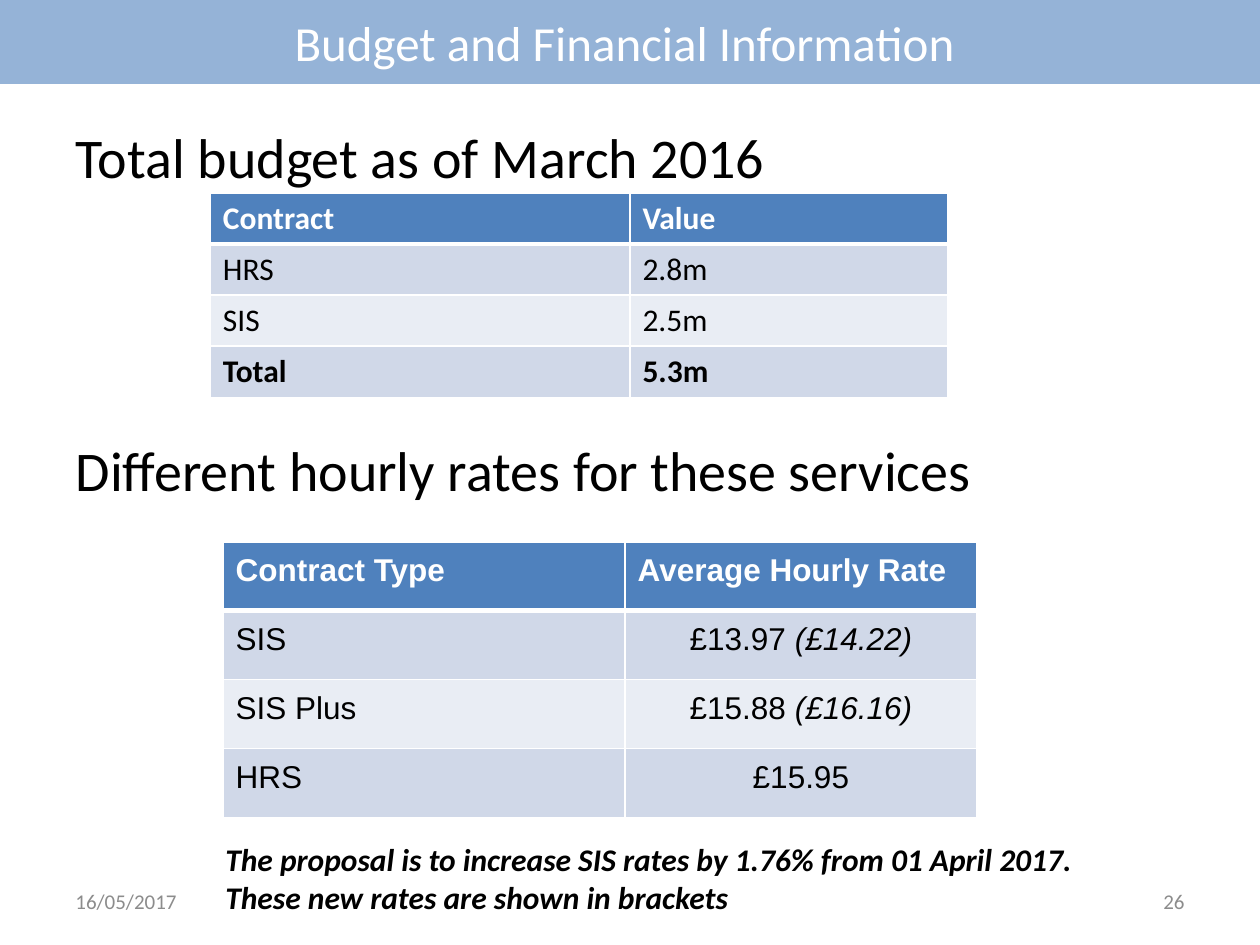
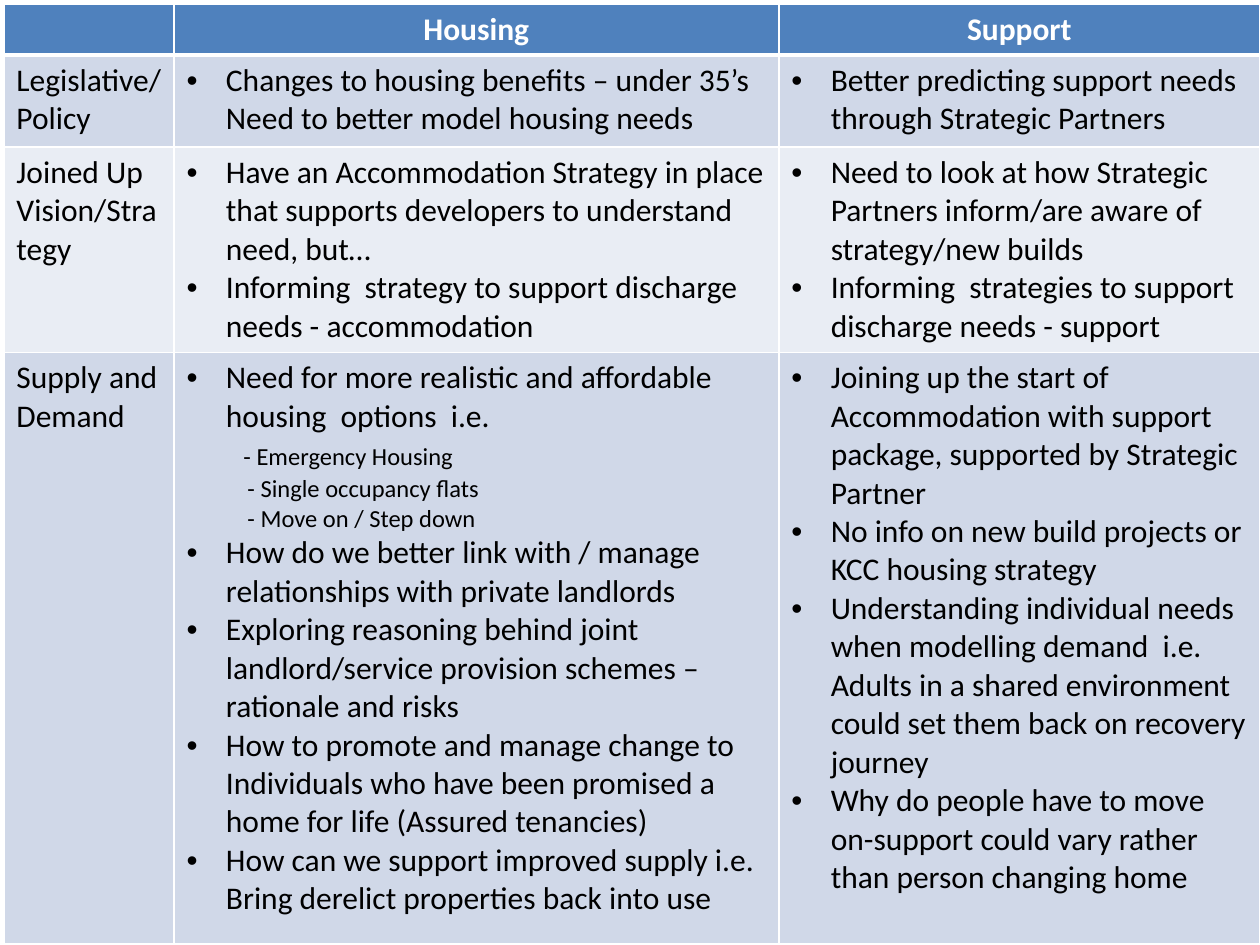
import pptx
import pptx.dml.color
import pptx.enum.text
import pptx.oxml.ns
import pptx.util
from lxml import etree

Pt = pptx.util.Pt
RGBColor = pptx.dml.color.RGBColor
Align = pptx.enum.text.PP_ALIGN
Anchor = pptx.enum.text.MSO_ANCHOR
qn = pptx.oxml.ns.qn

# Shared colours and formats
BLACK = RGBColor(0x00, 0x00, 0x00)
WHITE = RGBColor(0xFF, 0xFF, 0xFF)
GREY = RGBColor(0x8C, 0x8C, 0x8C)
BAND_BLUE = RGBColor(0x95, 0xB3, 0xD7)
HEADER_BLUE = RGBColor(0x4F, 0x81, 0xBD)
ROW_DARK = RGBColor(0xD0, 0xD8, 0xE8)
ROW_LIGHT = RGBColor(0xE9, 0xED, 0xF4)

TITLE_FONT = {"name": "Calibri", "size": Pt(28), "color": WHITE}
HEADING_FONT = {"name": "Calibri", "size": Pt(32), "color": BLACK}
FOOTER_FONT = {"name": "Calibri", "size": Pt(12), "color": GREY}
NOTE_FONT = {"name": "Calibri", "size": Pt(18), "color": BLACK,
             "bold": True, "italic": True}
CELL_FONT = {"name": "Calibri", "size": Pt(18), "color": BLACK, "bold": False}
HEADER_FONT = {**CELL_FONT, "color": WHITE, "bold": True}


def write_lines(text_frame, text, font_format, paragraph_format=None):
    """Write one paragraph per line of text and format each of them."""
    for index, line in enumerate(text.split("\n")):
        paragraph = text_frame.paragraphs[0] if index == 0 else text_frame.add_paragraph()
        for name, value in (paragraph_format or {}).items():
            setattr(paragraph, name, value)
        if not line:
            continue
        run = paragraph.add_run()
        run.text = line
        for name, value in font_format.items():
            if name == "color":
                run.font.color.rgb = value
            else:
                setattr(run.font, name, value)


def add_grid(slide, left, top, widths, heights, texts, font_name="Calibri"):
    """Add a banded table with white rules and a thick rule below its header."""
    table = slide.shapes.add_table(
        len(heights), len(widths), Pt(left), Pt(top),
        Pt(sum(widths)), Pt(sum(heights))).table
    for column, width in zip(table.columns, widths):
        column.width = Pt(width)
    for row_index, height in enumerate(heights):
        table.rows[row_index].height = Pt(height)
        for column_index, text in enumerate(texts[row_index]):
            cell = table.cell(row_index, column_index)
            font_format = HEADER_FONT if row_index == 0 else CELL_FONT
            write_lines(cell.text_frame, text, {**font_format, "name": font_name})
            # Borders come before the fill in the cell properties
            thick_side = {0: "lnB", 1: "lnT"}.get(row_index)
            for side in ("lnL", "lnR", "lnT", "lnB"):
                width = Pt(3) if side == thick_side else Pt(1)
                line = etree.SubElement(cell._tc.get_or_add_tcPr(), qn(f"a:{side}"), w=str(width))
                fill = etree.SubElement(line, qn("a:solidFill"))
                etree.SubElement(fill, qn("a:srgbClr"), val=str(WHITE))
            cell.fill.solid()
            cell.fill.fore_color.rgb = (
                HEADER_BLUE if row_index == 0 else ROW_DARK if row_index % 2 else ROW_LIGHT)
    return table


presentation = pptx.Presentation()
presentation.slide_width = Pt(720)
presentation.slide_height = Pt(540)

# Slide 1: budget
slide = presentation.slides.add_slide(presentation.slide_layouts[1])
title, body = slide.placeholders
for shape, box in ((title, (0, 0, 720, 48)), (body, (36, 66.2, 648, 442))):
    shape.left, shape.top, shape.width, shape.height = map(Pt, box)
    shape.text_frame.auto_size = pptx.enum.text.MSO_AUTO_SIZE.NONE
title.fill.solid()
title.fill.fore_color.rgb = BAND_BLUE
title.text_frame.vertical_anchor = Anchor.MIDDLE
write_lines(title.text_frame, "Budget and Financial Information ", TITLE_FONT,
            {"alignment": Align.CENTER})

# Section headings, the second one below the first table
write_lines(body.text_frame,
            "Total budget as of March 2016\nDifferent hourly rates for these services",
            HEADING_FONT, {"space_before": Pt(0)})
for paragraph in body.text_frame.paragraphs:
    properties = paragraph._p.get_or_add_pPr()
    properties.set("marL", "0")
    properties.set("indent", "0")
    etree.SubElement(properties, qn("a:buNone"))
body.text_frame.paragraphs[1].space_before = Pt(140.4)

# Budget table with a bold total row
budget_table = add_grid(
    slide, 120.2, 110.2, [239.8, 181.4], [29.2] * 4,
    [["Contract", "Value"], ["HRS", "2.8m"], ["SIS", "2.5m"], ["Total", "5.3m"]])
for cell in budget_table.rows[3].cells:
    cell.text_frame.paragraphs[0].runs[0].font.bold = True

# Hourly rate table, proposed rates in italics
rate_table = add_grid(
    slide, 127.5, 309.6, [229.7, 200.9], [39.4] * 4,
    [["Contract Type", "Average Hourly Rate"], ["SIS", "£13.97 "],
     ["SIS Plus", "£15.88 "], ["HRS", "£15.95"]], "Arial")
for row_index, proposed_rate in ((1, "(£14.22)"), (2, "(£16.16)")):
    write_lines(rate_table.cell(row_index, 1).text_frame, proposed_rate,
                {**CELL_FONT, "name": "Arial", "italic": True})
for cell in rate_table.iter_cells():
    cell.text_frame.paragraphs[0].line_spacing = 1.15
for row_index in (1, 2, 3):
    rate_table.cell(row_index, 1).text_frame.paragraphs[0].alignment = Align.CENTER

# Note, date and slide number
for box, text, font_format, alignment, anchor in (
        ((36, 500.5, 168, 28.8), "16/05/2017", FOOTER_FONT, Align.LEFT, Anchor.MIDDLE),
        ((516, 500.5, 168, 28.8), "26", FOOTER_FONT, Align.RIGHT, Anchor.MIDDLE),
        ((121.7, 476.6, 544.3, 51),
         "The proposal is to increase SIS rates by 1.76% from 01 April 2017.\n"
         "These new rates are shown in brackets", NOTE_FONT, Align.LEFT, Anchor.TOP)):
    text_frame = slide.shapes.add_textbox(*map(Pt, box)).text_frame
    text_frame.word_wrap = True
    text_frame.vertical_anchor = anchor
    write_lines(text_frame, text, font_format, {"alignment": alignment})

# Slide 2: housing and support
slide = presentation.slides.add_slide(presentation.slide_layouts[6])
issues_table = add_grid(
    slide, 2.2, 2.2, [97.2, 345.6, 275], [29.2, 52.6, 117.4, 337.7],
    [["", "Housing", "Support"],
     ["Legislative/Policy",
      "Changes to housing benefits – under 35’s Need to better model housing needs",
      "Better predicting support needs through Strategic Partners"],
     ["Joined Up Vision/Strategy",
      "Have an Accommodation Strategy in place that supports developers to "
      "understand need, but…\n"
      "Informing  strategy to support discharge needs - accommodation",
      "Need to look at how Strategic Partners inform/are aware of strategy/new builds\n"
      "Informing  strategies to support discharge needs - support"],
     ["Supply and Demand",
      "Need for more realistic and affordable housing  options  i.e.\n"
      "- Emergency Housing\n"
      "- Single occupancy flats\n"
      "- Move on / Step down\n"
      "How do we better link with / manage relationships with private landlords\n"
      "Exploring reasoning behind joint landlord/service provision schemes – "
      "rationale and risks\n"
      "How to promote and manage change to Individuals who have been promised a "
      "home for life (Assured tenancies)\n"
      "How can we support improved supply i.e. Bring derelict properties back into use",
      "Joining up the start of Accommodation with support package, supported by "
      "Strategic Partner\n"
      "No info on new build projects or KCC housing strategy\n"
      "Understanding individual needs when modelling demand  i.e. Adults in a shared "
      "environment could set them back on recovery journey\n"
      "Why do people have to move on-support could vary rather than person changing home"]])

# Centred headers, bulleted issues and smaller indented options
for column_index in (1, 2):
    issues_table.cell(0, column_index).text_frame.paragraphs[0].alignment = Align.CENTER
    for row_index in (1, 2, 3):
        for paragraph in issues_table.cell(row_index, column_index).text_frame.paragraphs:
            properties = paragraph._p.get_or_add_pPr()
            if paragraph.text.startswith("- "):
                properties.set("marL", str(Pt(34.8)))
                paragraph.runs[0].font.size = Pt(14)
            else:
                properties.set("marL", str(Pt(22.5)))
                properties.set("indent", str(Pt(-22.5)))
                etree.SubElement(properties, qn("a:buFont"), typeface="Arial")
                etree.SubElement(properties, qn("a:buChar"), char="•")
first_option = issues_table.cell(3, 1).text_frame.paragraphs[1]
first_option._p.get_or_add_pPr().set("marL", str(Pt(32.5)))
first_option.space_before = Pt(4)
first_option.space_after = Pt(1)

presentation.save("out.pptx")
